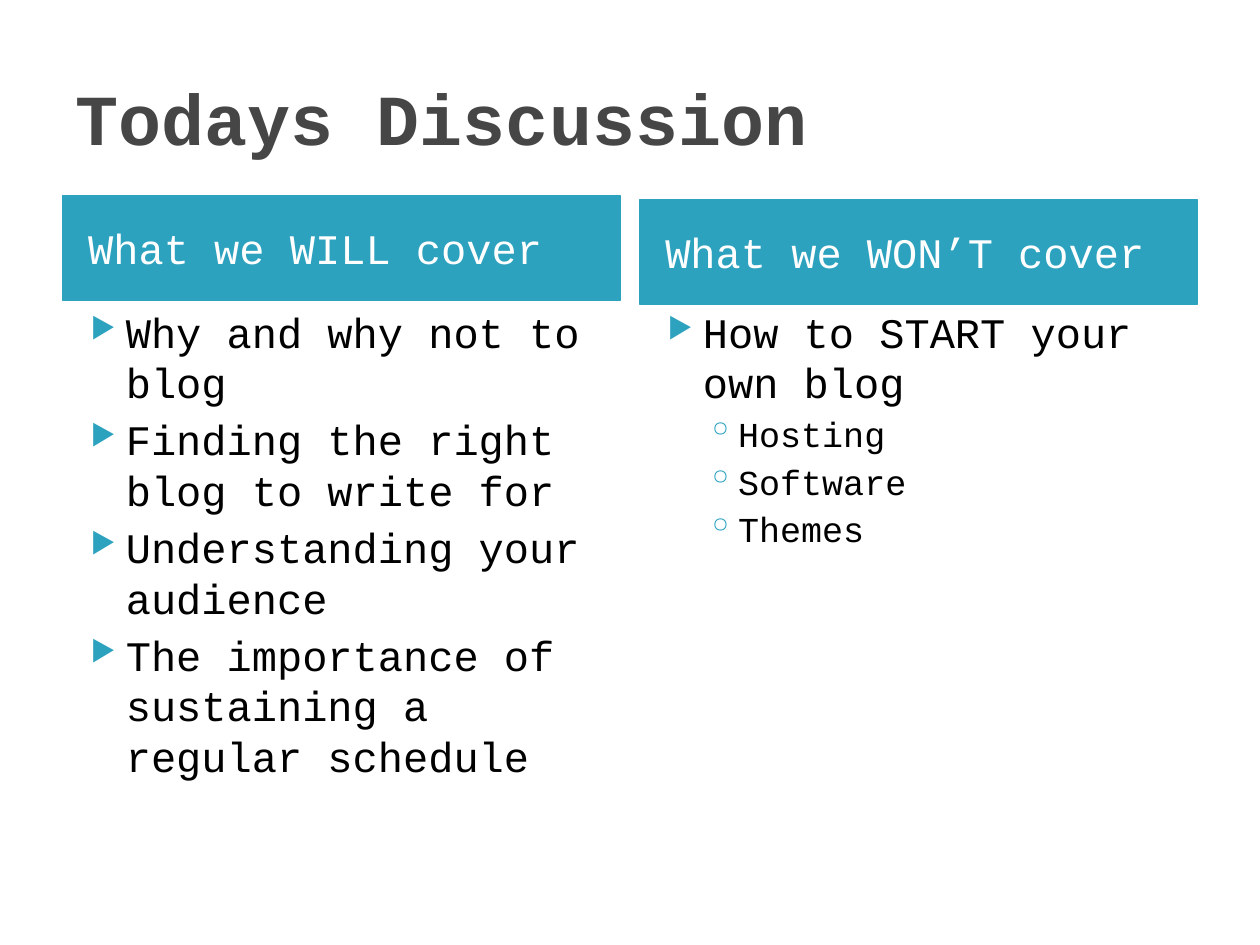
import pptx
import pptx.util
import pptx.dml.color
import pptx.enum.shapes
import pptx.enum.text
from dataclasses import dataclass
from lxml import etree

Pt = pptx.util.Pt
Color = pptx.dml.color.RGBColor
Anchor = pptx.enum.text.MSO_ANCHOR

# Content: (heading, heading top, [(level, text), ...])
TITLE = "Todays Discussion"
COLUMNS = [
    ("What we WILL cover", 111.6, [
        (0, "Why and why not to blog"),
        (0, "Finding the right blog to write for"),
        (0, "Understanding your audience"),
        (0, "The importance of sustaining a regular schedule"),
    ]),
    ("What we WON’T cover", 113.9, [
        (0, "How to START your own blog"),
        (1, "Hosting"),
        (1, "Software"),
        (1, "Themes"),
    ]),
]


@dataclass(frozen=True)
class Theme:
    font: str = "Courier New"
    accent: str = "2DA2BF"
    title_color: str = "464646"
    heading_color: str = "FFFFFF"
    text_color: str = "000000"
    title_size: float = 41
    heading_size: float = 24


THEME = Theme()
# Per level: type size, left margin, hanging indent, space before, bullet, bullet size %
LEVELS = [(24, 28.8, 20.16, 4, "▶", 68), (20, 48.96, 18, 3.2, "◦", 100)]

# Layout
PAGE_WIDTH, PAGE_HEIGHT = 720, 540
MARGIN, COLUMN_WIDTH = 36, 318.24
COLUMN_STEP = PAGE_WIDTH - 2 * MARGIN - COLUMN_WIDTH
HEADING_HEIGHT, LIST_TOP, LIST_HEIGHT = 60, 171.4, 310.3


def style(para, size, color, bold=False):
    para.alignment = pptx.enum.text.PP_ALIGN.LEFT
    for span in para.runs:
        span.font.name = THEME.font
        span.font.size = Pt(size)
        span.font.bold = bold
        span.font.color.rgb = Color.from_string(color)


def add_bullet(para, char, percent, left, hanging):
    properties = para._p.get_or_add_pPr()
    properties.set("marL", str(Pt(left)))
    properties.set("indent", str(-Pt(hanging)))
    namespace = "{http://schemas.openxmlformats.org/drawingml/2006/main}"
    color = etree.SubElement(properties, namespace + "buClr")
    etree.SubElement(color, namespace + "srgbClr", val=THEME.accent)
    etree.SubElement(properties, namespace + "buSzPct", val=str(percent * 1000))
    etree.SubElement(properties, namespace + "buChar", char=char)


def add_heading(page, text, left, top):
    band = page.shapes.add_shape(
        pptx.enum.shapes.MSO_SHAPE.RECTANGLE,
        Pt(left), Pt(top), Pt(COLUMN_WIDTH), Pt(HEADING_HEIGHT))
    band.shadow.inherit = False
    band.fill.solid()
    band.fill.fore_color.rgb = Color.from_string(THEME.accent)
    band.line.color.rgb = Color.from_string(THEME.accent)
    band.line.width = Pt(0.75)
    frame = band.text_frame
    frame.margin_left = Pt(14.4)
    frame.vertical_anchor = Anchor.MIDDLE
    frame.text = text
    style(frame.paragraphs[0], THEME.heading_size, THEME.heading_color)


def add_list(page, items, left):
    box = page.shapes.add_textbox(
        Pt(left), Pt(LIST_TOP), Pt(COLUMN_WIDTH), Pt(LIST_HEIGHT))
    frame = box.text_frame
    frame.word_wrap = True
    for index, (level, text) in enumerate(items):
        size, margin, hanging, space, char, percent = LEVELS[level]
        para = frame.add_paragraph() if index else frame.paragraphs[0]
        para.text = text
        para.level = level
        add_bullet(para, char, percent, margin, hanging)
        para.space_before = Pt(space if index else 0)
        style(para, size, THEME.text_color)


def main():
    deck = pptx.Presentation()
    deck.slide_width, deck.slide_height = Pt(PAGE_WIDTH), Pt(PAGE_HEIGHT)
    page = deck.slides.add_slide(deck.slide_layouts[5])

    # Title
    title = page.shapes.title
    title.left, title.top = Pt(MARGIN), Pt(21.6)
    title.width, title.height = Pt(PAGE_WIDTH - 2 * MARGIN), Pt(90)
    title.text_frame.text = TITLE
    title.text_frame.vertical_anchor = Anchor.MIDDLE
    style(title.text_frame.paragraphs[0], THEME.title_size, THEME.title_color, True)

    # Columns
    for index, (heading, top, items) in enumerate(COLUMNS):
        left = MARGIN + index * COLUMN_STEP
        add_heading(page, heading, left, top)
        add_list(page, items, left)

    deck.save("out.pptx")


if __name__ == "__main__":
    main()
